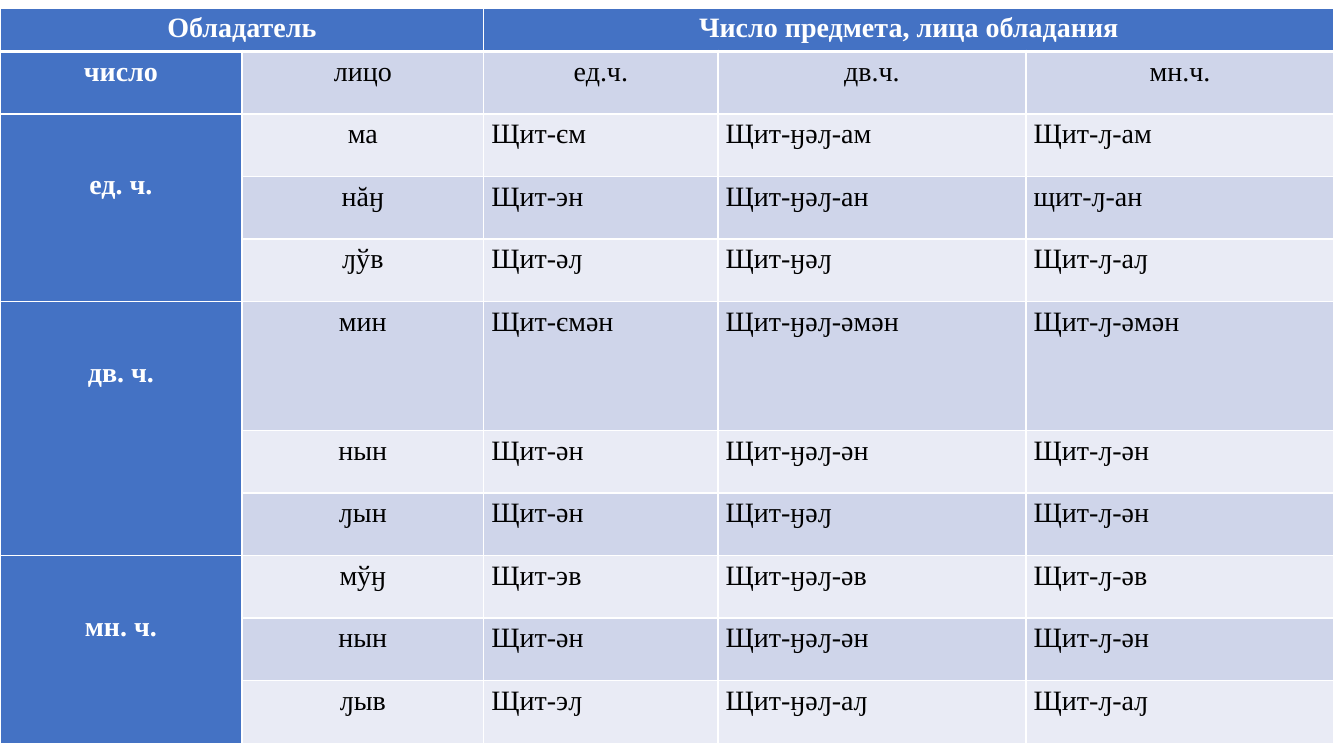
from dataclasses import dataclass

from lxml import etree
from pptx import Presentation
from pptx.dml.color import RGBColor
from pptx.enum import text
from pptx.oxml import ns
from pptx.util import Pt


@dataclass(frozen=True)
class Theme:
    font: str = "Times New Roman"
    size: float = 20
    head: str = "4472C4"
    bands: tuple[str, str] = ("E9EBF5", "CFD5EA")
    light: str = "FFFFFF"
    dark: str = "000000"
    rule: float = 1
    head_rule: float = 3


@dataclass(frozen=True)
class OwnerGroup:
    number: str
    forms: tuple[tuple[str, str, str, str], ...]


THEME = Theme()
CENTER = text.PP_ALIGN.CENTER
LEFT = text.PP_ALIGN.LEFT

# Content
HEADINGS = {0: ("Обладатель", 1), 2: ("Число предмета, лица обладания", 4)}
SUBHEADINGS = ("число", "лицо", "ед.ч.", "дв.ч.", "мн.ч.")
GROUPS = (
    OwnerGroup("ед. ч.", (
        ("ма", "Щит-єм", "Щит-ӈǝԓ-ам", "Щит-ԓ-ам"),
        ("нăӈ", "Щит-эн", "Щит-ӈǝԓ-ан", "щит-ԓ-ан"),
        ("ԓўв", "Щит-əԓ", "Щит-ӈǝԓ", "Щит-ԓ-аԓ"),
    )),
    OwnerGroup("дв. ч.", (
        ("мин", "Щит-ємǝн", "Щит-ӈǝԓ-ǝмəн", "Щит-ԓ-ǝмəн"),
        ("нын", "Щит-əн", "Щит-ӈǝԓ-ǝн", "Щит-ԓ-ǝн"),
        ("ԓын", "Щит-əн", "Щит-ӈǝԓ", "Щит-ԓ-ǝн"),
    )),
    OwnerGroup("мн. ч.", (
        ("мўӈ", "Щит-эв", "Щит-ӈǝԓ-ǝв", "Щит-ԓ-ǝв"),
        ("нын", "Щит-əн", "Щит-ӈǝԓ-ǝн", "Щит-ԓ-ǝн"),
        ("ԓыв", "Щит-эԓ", "Щит-ӈǝԓ-аԓ", "Щит-ԓ-аԓ"),
    )),
)

# Table geometry, in points
TOP = 5.8
COL_WIDTHS = (172.8, 172.8, 167.3, 220, 220)
ROW_HEIGHTS = (31, *[44.65] * 4, 92.2, *[44.65] * 5)
SIDE_INSET = 5.4
GROUP_INSET = 36.4


def set_borders(cell, **widths: float) -> None:
    """Draw the four cell edges; widths override the usual rule by side."""
    tc_pr = cell._tc.get_or_add_tcPr()
    for side in "LRTB":
        width = Pt(widths.get(side, THEME.rule))
        ln = etree.SubElement(tc_pr, ns.qn(f"a:ln{side}"), w=str(width))
        fill = etree.SubElement(ln, ns.qn("a:solidFill"))
        etree.SubElement(fill, ns.qn("a:srgbClr"), val=THEME.light)


def write_cell(cell, words: str, fill: str, align, head: bool = False,
               inset: float = 0, **borders: float) -> None:
    set_borders(cell, **borders)
    cell.fill.solid()
    cell.fill.fore_color.rgb = RGBColor.from_string(fill)
    p = cell.text_frame.paragraphs[0]
    r = p.add_run()
    r.text = words
    r.font.color.rgb = RGBColor.from_string(THEME.light if head else THEME.dark)
    formats = (
        (cell, {"margin_left": Pt(SIDE_INSET), "margin_right": Pt(SIDE_INSET),
                "margin_top": Pt(inset), "margin_bottom": Pt(0),
                "vertical_anchor": text.MSO_ANCHOR.TOP}),
        (p, {"alignment": align, "line_spacing": 1.15, "space_after": Pt(10)}),
        (r.font, {"name": THEME.font, "size": Pt(THEME.size), "bold": head}),
    )
    for target, values in formats:
        for name, value in values.items():
            setattr(target, name, value)


def fill_table(table) -> None:
    # Heading row
    for col, (words, last) in HEADINGS.items():
        table.cell(0, col).merge(table.cell(0, last))
        write_cell(table.cell(0, col), words, THEME.head, CENTER, head=True,
                   B=THEME.head_rule)

    # Subheading row
    for col, words in enumerate(SUBHEADINGS):
        fill = THEME.bands[1] if col else THEME.head
        write_cell(table.cell(1, col), words, fill, CENTER, head=col == 0,
                   T=THEME.head_rule)

    # Owner groups, banded by row
    row = 2
    for group in GROUPS:
        owner = table.cell(row, 0)
        owner.merge(table.cell(row + len(group.forms) - 1, 0))
        write_cell(owner, group.number, THEME.head, CENTER, head=True,
                   inset=GROUP_INSET)
        for forms in group.forms:
            for col, words in enumerate(forms, start=1):
                write_cell(table.cell(row, col), words, THEME.bands[row % 2],
                           CENTER if col == 1 else LEFT)
            row += 1


def main() -> None:
    prs = Presentation()
    prs.slide_width, prs.slide_height = Pt(960), Pt(540)
    s = prs.slides.add_slide(prs.slide_layouts[6])

    # Possessive forms table
    table = s.shapes.add_table(
        len(ROW_HEIGHTS), len(COL_WIDTHS), Pt(0), Pt(TOP),
        Pt(sum(COL_WIDTHS)), Pt(sum(ROW_HEIGHTS))).table
    for column, width in zip(table.columns, COL_WIDTHS):
        column.width = Pt(width)
    for row, height in zip(table.rows, ROW_HEIGHTS):
        row.height = Pt(height)
    fill_table(table)

    prs.save("out.pptx")


if __name__ == "__main__":
    main()
